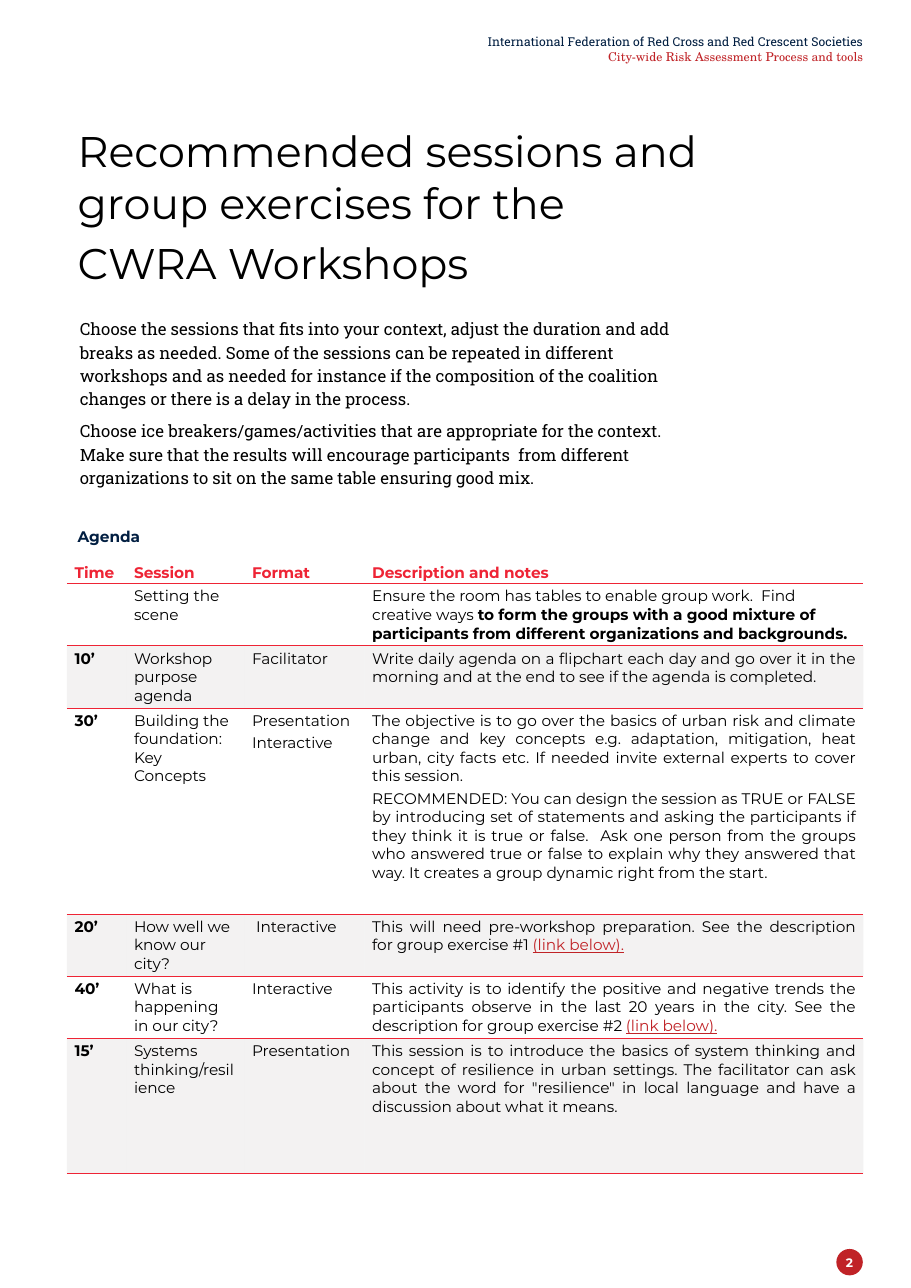
"""Builds the agenda page for the city-wide risk assessment workshops."""
from lxml.etree import SubElement
from pptx import Presentation
from pptx.dml.color import RGBColor
from pptx.enum.shapes import MSO_SHAPE as Shape
from pptx.enum.text import MSO_ANCHOR as Anchor, PP_ALIGN as Align
from pptx.oxml import parse_xml
from pptx.oxml.ns import nsdecls, qn
from pptx.util import Cm, Pt

NAVY = RGBColor(0x01, 0x1E, 0x41)
RED = RGBColor(0xEE, 0x24, 0x35)
DARK_RED = RGBColor(0xC0, 0x23, 0x27)
GREY = RGBColor(0xE7, 0xE6, 0xE6)
BLACK = RGBColor(0, 0, 0)
WHITE = RGBColor(0xFE, 0xFF, 0xFE)
SANS, SLAB, SERIF = "Montserrat", "Roboto Slab", "TeX Gyre Schola"

LINK = ("(link below).", {"color": DARK_RED, "underline": True})
COLUMN_WIDTHS = (1.37, 2.72, 2.77, 11.5)
HEADINGS = ("Time", "Session", "Format", "Description and notes")
SESSIONS = [
    (1.37, "", "Setting the scene", [], [[
        ("Ensure the room has tables to enable group work.  Find creative ways ", {}),
        ("to form the groups with a good mixture of participants from different "
         "organizations and backgrounds.", {"bold": True})]]),
    (1.37, "10’", "Workshop purpose agenda", ["Facilitator"], [
        "Write daily agenda on a flipchart each day and go over it in the morning "
        "and at the end to see if the agenda is completed."]),
    (4.75, "30’", "Building the foundation: Key Concepts", ["Presentation", "Interactive"], [
        "The objective is to go over the basics of urban risk and climate change and "
        "key concepts e.g. adaptation, mitigation, heat urban, city facts etc. If "
        "needed invite external experts to cover this session.",
        "RECOMMENDED: You can design the session as TRUE or FALSE by introducing set "
        "of statements and asking the participants if they think it is true or false.  "
        "Ask one person from the groups who answered true or false to explain why they "
        "answered that way. It creates a group dynamic right from the start."]),
    (1.37, "20’", "How well we know our city?", [" Interactive"], [[
        ("This will need pre-workshop preparation. See the description for group "
         "exercise #1 ", {}), LINK]]),
    (1.37, "40’", "What is happening in our city?", ["Interactive"], [[
        ("This activity is to identify the positive and negative trends the "
         "participants observe in the last 20 years in the city. See the description "
         "for group exercise #2 ", {}), LINK]]),
    (3.12, "15’", "Systems thinking/resilience", ["Presentation"], [
        "This session is to introduce the basics of system thinking and concept of "
        "resilience in urban settings. The facilitator can ask about the word for "
        "\"resilience\" in local language and have a discussion about what it means."]),
]


def write(frame, paragraphs, font=SANS, size=10, color=BLACK, bold=False,
          align=Align.LEFT, gap=0, spacing=None):
    """Fill a text frame; a paragraph is a string or a list of (text, changes)."""
    for index, content in enumerate(paragraphs):
        para = frame.add_paragraph() if index else frame.paragraphs[0]
        para.alignment = align
        para.line_spacing = spacing
        para.space_before = Pt(gap if index else 0)
        spans = [(content, {})] if isinstance(content, str) else content
        for text, changes in spans:
            span = para.add_run()
            span.text = text
            span.font.name = changes.get("font", font)
            span.font.size = Pt(size)
            span.font.bold = changes.get("bold", bold)
            span.font.underline = changes.get("underline", False)
            span.font.color.rgb = changes.get("color", color)


def set_margins(target, left, top, right, bottom):
    """Set the inner margins of a frame or cell in centimetres."""
    target.margin_left, target.margin_top = Cm(left), Cm(top)
    target.margin_right, target.margin_bottom = Cm(right), Cm(bottom)


def add_frame(page, box, margins, anchor=Anchor.TOP):
    """Add a wrapping text box and return its frame."""
    frame = page.shapes.add_textbox(*map(Cm, box)).text_frame
    frame.word_wrap = True
    frame.vertical_anchor = anchor
    set_margins(frame, *margins)
    return frame


def add_header(page, box):
    """Place the running header."""
    frame = add_frame(page, box, (0.25, 0, 0, 0.25))
    write(frame, ["International Federation of Red Cross and Red Crescent Societies",
                  [("City-wide Risk Assessment Process and tools",
                    {"font": SERIF, "color": DARK_RED})]],
          font=SLAB, size=8, color=NAVY, align=Align.RIGHT)


def add_title(page, box):
    """Place the page title."""
    frame = add_frame(page, box, (0.25, 0.13, 0.25, 0.13), Anchor.MIDDLE)
    write(frame, ["Recommended sessions and group exercises for the", "CWRA Workshops"],
          size=28, gap=6)


def add_introduction(page, box):
    """Place the introductory paragraphs."""
    frame = add_frame(page, box, (0.3, 0.2, 0.5, 0.4))
    write(frame, [
        "Choose the sessions that fits into your context, adjust the duration and add "
        "breaks as needed. Some of the sessions can be repeated in different workshops "
        "and as needed for instance if the composition of the coalition changes or "
        "there is a delay in the process.",
        "Choose ice breakers/games/activities that are appropriate for the context. "
        "Make sure that the results will encourage participants  from different "
        "organizations to sit on the same table ensuring good mix."],
        font=SLAB, size=11, gap=6, spacing=1.15)


def format_cell(cell, ruled="", shaded=False):
    """Set the fill and the borders of a cell; ruled lists the sides with a line."""
    if shaded:
        cell.fill.solid()
        cell.fill.fore_color.rgb = GREY
        tint = cell._tc.tcPr.find(".//" + qn("a:srgbClr"))
        SubElement(tint, qn("a:alpha")).set("val", "49000")
    else:
        cell.fill.background()
    for position, side in enumerate("LRTB"):
        paint = (f'<a:solidFill><a:srgbClr val="{RED}"/></a:solidFill>'
                 if side in ruled else "<a:noFill/>")
        border = f'<a:ln{side} {nsdecls("a")} w="{Pt(0.75)}">{paint}</a:ln{side}>'
        cell._tc.get_or_add_tcPr().insert(position, parse_xml(border))


def add_agenda(page, box):
    """Place the agenda table."""
    heights = [1.04, 0.51] + [session[0] for session in SESSIONS]
    table = page.shapes.add_table(len(heights), len(COLUMN_WIDTHS), *map(Cm, box)).table
    table.first_row = table.horz_banding = False
    for column, width in zip(table.columns, COLUMN_WIDTHS):
        column.width = Cm(width)
    for row, height in zip(table.rows, heights):
        row.height = Cm(height)

    caption = table.cell(0, 0)
    for cell in table.rows[0].cells:
        format_cell(cell)
    caption.merge(table.cell(0, len(COLUMN_WIDTHS) - 1))
    set_margins(caption, 0.25, 0.25, 0.25, 0.25)
    write(caption.text_frame, ["Agenda"], color=NAVY, bold=True)

    for cell, heading in zip(table.rows[1].cells, HEADINGS):
        format_cell(cell, "B")
        set_margins(cell, 0.18, 0, 0.18, 0)
        cell.vertical_anchor = Anchor.MIDDLE
        write(cell.text_frame, [heading], color=RED, bold=True)

    for index, (_, time, session, styles, notes) in enumerate(SESSIONS):
        aligns = (Align.LEFT, Align.LEFT, Align.JUSTIFY,
                  Align.JUSTIFY if index else Align.LEFT)
        contents = ([time], [session], styles, notes)
        cells = table.rows[index + 2].cells
        for column, (cell, content) in enumerate(zip(cells, contents)):
            format_cell(cell, "TB", shaded=index % 2 == 1)
            set_margins(cell, 0.18, 0.08, 0.18, 0.08)
            write(cell.text_frame, content, bold=column == 0,
                  align=aligns[column], gap=2.4)


def add_page_number(page, box):
    """Place the page number in its disc."""
    disc = page.shapes.add_shape(Shape.OVAL, *map(Cm, box))
    disc.shadow.inherit = False
    disc.fill.solid()
    disc.fill.fore_color.rgb = DARK_RED
    disc.line.fill.background()
    frame = disc.text_frame
    frame.word_wrap = False
    frame.vertical_anchor = Anchor.MIDDLE
    set_margins(frame, 0, 0, 0, 0)
    write(frame, ["2"], size=8, color=WHITE, bold=True, align=Align.CENTER)


def main():
    """Build and save the page."""
    deck = Presentation()
    deck.slide_width, deck.slide_height = Cm(21), Cm(29.7)
    page = deck.slides.add_slide(deck.slide_layouts[6])
    add_header(page, (8.2, 0.79, 11.71, 0.81))
    add_introduction(page, (1.54, 7.09, 15.24, 4.29))
    add_title(page, (1.54, 2.74, 15.24, 4.06))
    add_agenda(page, (1.54, 11.91, sum(COLUMN_WIDTHS), 14.9))
    add_page_number(page, (19.28, 28.8, 0.61, 0.61))
    deck.save("out.pptx")


if __name__ == "__main__":
    main()
